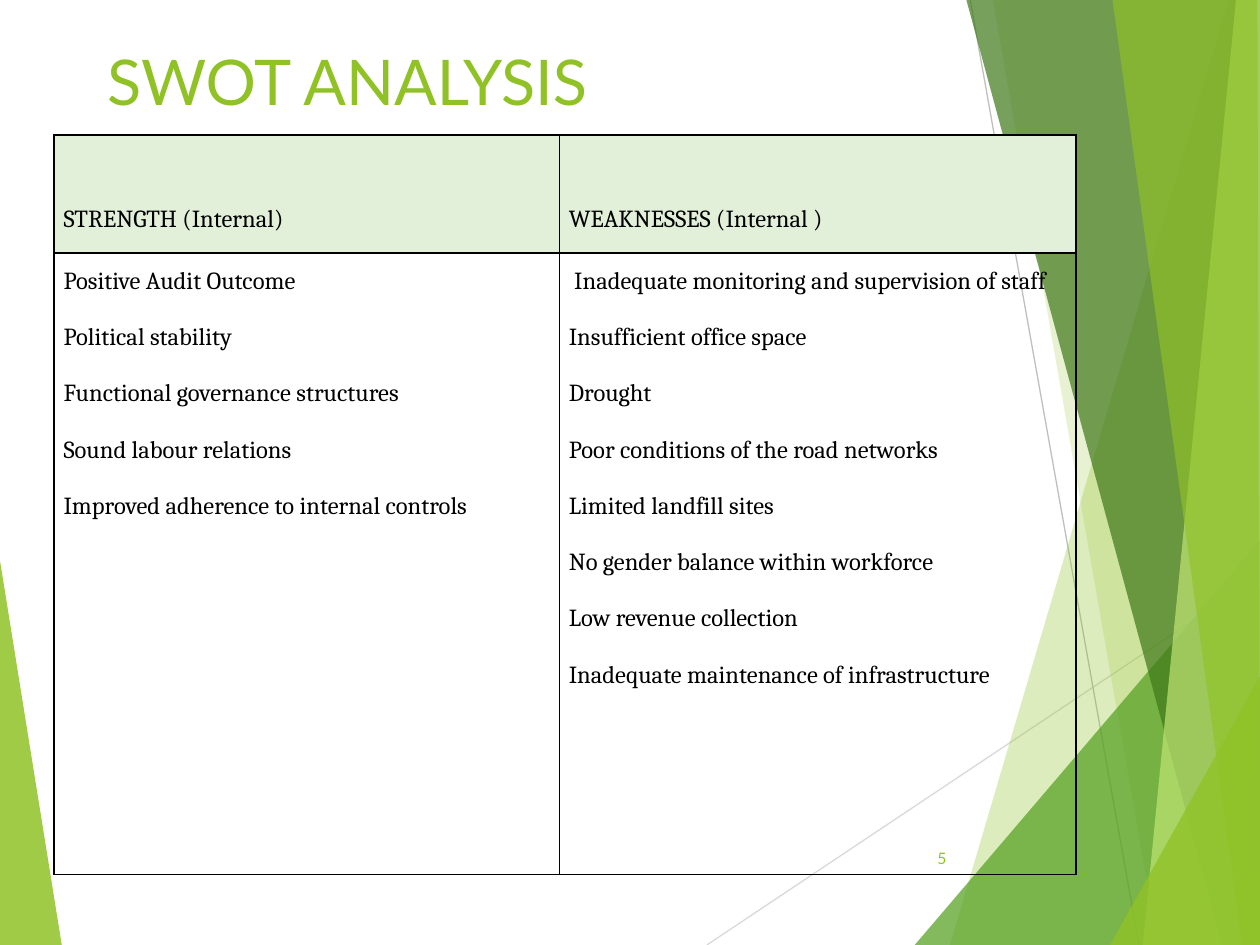
from dataclasses import dataclass

from lxml import etree
from pptx import Presentation
from pptx.dml.color import RGBColor
from pptx.enum import shapes, text
from pptx.oxml.ns import qn
from pptx.util import Inches, Pt

COLORS = {
    "lime": "90C226",
    "green": "54A021",
    "forest": "3F7819",
    "pale": "C0E474",
    "light_gray": "D9D9D9",
    "gray": "BFBFBF",
    "header": "E2EFD9",
    "black": "000000",
}
W, H = 10, 7.5


@dataclass
class Facet:
    color: str
    opacity: int
    points: list[tuple[float, float]]


@dataclass
class Ray:
    color: str
    start: tuple[float, float]
    end: tuple[float, float]


@dataclass
class Column:
    heading: str
    width: float
    items: list[str]


LEFT_FACET = Facet("lime", 85, [(0, 4.45), (0.49, H), (0, H)])
RAYS = [
    Ray("light_gray", (5.61, H), (W, 4.57)),
    Ray("gray", (7.7, 0), (9.04, H)),
]
RIGHT_FACETS = [
    Facet("lime", 30, [(9.75, 0), (7.54, H), (W, H), (W, 0)]),
    Facet("lime", 20, [(7.88, 0), (9.19, H), (W, H), (W, 0)]),
    Facet("green", 72, [(7.26, H), (W, 4.29), (W, H)]),
    Facet("forest", 70, [(7.67, 0), (9.7, H), (W, H), (W, 0)]),
    Facet("pale", 70, [(9.81, 0), (9.07, H), (W, H), (W, 0)]),
    Facet("lime", 65, [(8.83, 0), (9.86, H), (W, H), (9.98, 0)]),
    Facet("lime", 80, [(8.81, H), (W, 5.37), (W, H)]),
]
COLUMNS = [
    Column("STRENGTH (Internal)", 4.01, [
        "Positive Audit Outcome",
        "Political stability",
        "Functional governance structures",
        "Sound labour relations",
        "Improved adherence to internal controls",
    ]),
    Column("WEAKNESSES (Internal )", 4.1, [
        " Inadequate monitoring and supervision of staff",
        "Insufficient office space",
        "Drought",
        "Poor conditions of the road networks",
        "Limited landfill sites",
        "No gender balance within workforce",
        "Low revenue collection",
        "Inadequate maintenance of infrastructure",
    ]),
]


def rgb(name: str) -> RGBColor:
    return RGBColor.from_string(COLORS[name])


def style(p, font: str, size: float, color: str, align) -> None:
    p.font.name = font
    p.font.size = Pt(size)
    p.font.color.rgb = rgb(color)
    p.alignment = align


def draw_facet(slide, facet: Facet) -> None:
    start, *rest = [(Inches(x), Inches(y)) for x, y in facet.points]
    builder = slide.shapes.build_freeform(*start)
    builder.add_line_segments(rest, close=True)
    sp = builder.convert_to_shape()
    sp.shadow.inherit = False
    sp.line.fill.background()
    sp.fill.solid()
    sp.fill.fore_color.rgb = rgb(facet.color)
    clr = sp._element.spPr.find(qn("a:solidFill"))[0]
    etree.SubElement(clr, qn("a:alpha"), val=str(facet.opacity * 1000))


def draw_ray(slide, ray: Ray) -> None:
    line = slide.shapes.add_connector(
        shapes.MSO_CONNECTOR.STRAIGHT,
        *(Inches(v) for v in ray.start + ray.end))
    line.line.color.rgb = rgb(ray.color)
    line.line.width = Pt(0.75)
    etree.SubElement(line._element.spPr, qn("a:effectLst"))


def border_cell(cell) -> None:
    """Put a 1 pt black line on all sides; borders must precede the fill."""
    tc_pr = cell._tc.get_or_add_tcPr()
    for i, side in enumerate(("lnL", "lnR", "lnT", "lnB")):
        ln = etree.Element(qn(f"a:{side}"), w=str(Pt(1)))
        fill = etree.SubElement(ln, qn("a:solidFill"))
        etree.SubElement(fill, qn("a:srgbClr"), val=COLORS["black"])
        tc_pr.insert(i, ln)


def fill_cell(cell, lines: list[str], top: float = 0) -> None:
    cell.margin_left = cell.margin_right = Pt(5.4)
    cell.margin_top, cell.margin_bottom = Inches(top), 0
    tf = cell.text_frame
    tf.text = "\n".join(lines)
    for p in tf.paragraphs:
        style(p, "Cambria", 14, "black", text.PP_ALIGN.JUSTIFY)
        p.line_spacing = 1.5
        p.space_after = Pt(8)
    border_cell(cell)


def draw_table(slide) -> None:
    table = slide.shapes.add_table(
        2, len(COLUMNS), Inches(0.43), Inches(1.07),
        Inches(sum(c.width for c in COLUMNS)), Inches(5.87)).table
    table.first_row = table.horz_banding = False
    table.rows[0].height, table.rows[1].height = Inches(0.94), Inches(4.93)
    for i, column in enumerate(COLUMNS):
        table.columns[i].width = Inches(column.width)
        head, body = table.cell(0, i), table.cell(1, i)
        head.fill.solid()
        head.fill.fore_color.rgb = rgb("header")
        body.fill.background()
        fill_cell(head, [column.heading], top=0.45)
        fill_cell(body, column.items)


def draw_title(slide) -> None:
    title = slide.shapes.title
    title.left, title.top = Inches(0.75), Inches(0.29)
    title.width, title.height = Inches(6.86), Inches(1.83)
    tf = title.text_frame
    tf.text = "SWOT ANALYSIS"
    tf.vertical_anchor = text.MSO_ANCHOR.TOP
    style(tf.paragraphs[0], "Lato", 36, "lime", text.PP_ALIGN.LEFT)


def draw_page_number(slide) -> None:
    tf = slide.shapes.add_textbox(
        Inches(7.05), Inches(6.61), Inches(0.56), Inches(0.4)).text_frame
    tf.text = "5"
    tf.word_wrap = True
    tf.vertical_anchor = text.MSO_ANCHOR.MIDDLE
    style(tf.paragraphs[0], "Lato", 9, "lime", text.PP_ALIGN.RIGHT)


def main() -> None:
    prs = Presentation()
    prs.slide_width, prs.slide_height = Inches(W), Inches(H)
    slide = prs.slides.add_slide(prs.slide_layouts[5])
    draw_facet(slide, LEFT_FACET)
    for ray in RAYS:
        draw_ray(slide, ray)
    for facet in RIGHT_FACETS:
        draw_facet(slide, facet)
    draw_title(slide)
    draw_table(slide)
    draw_page_number(slide)
    prs.save("out.pptx")


if __name__ == "__main__":
    main()
